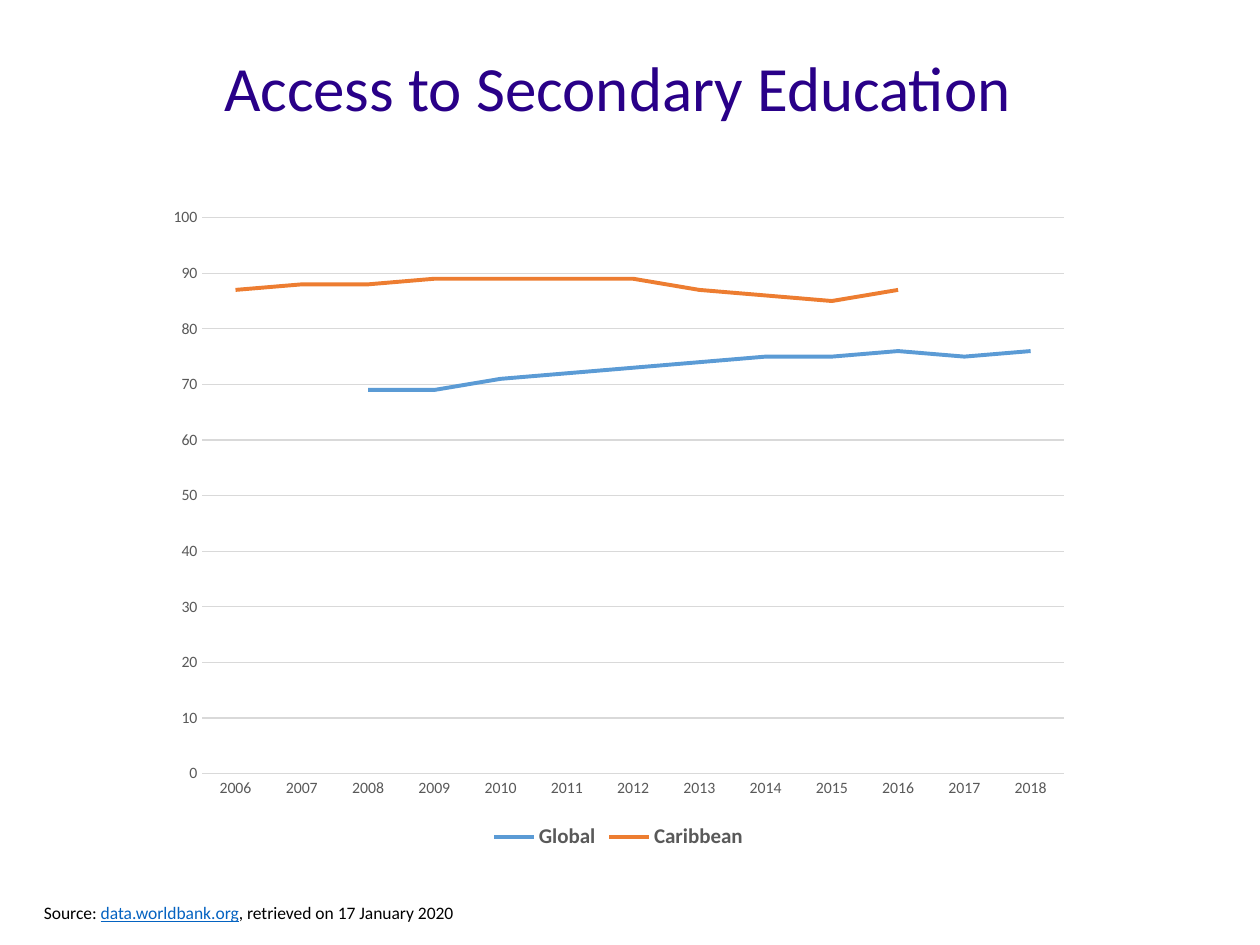
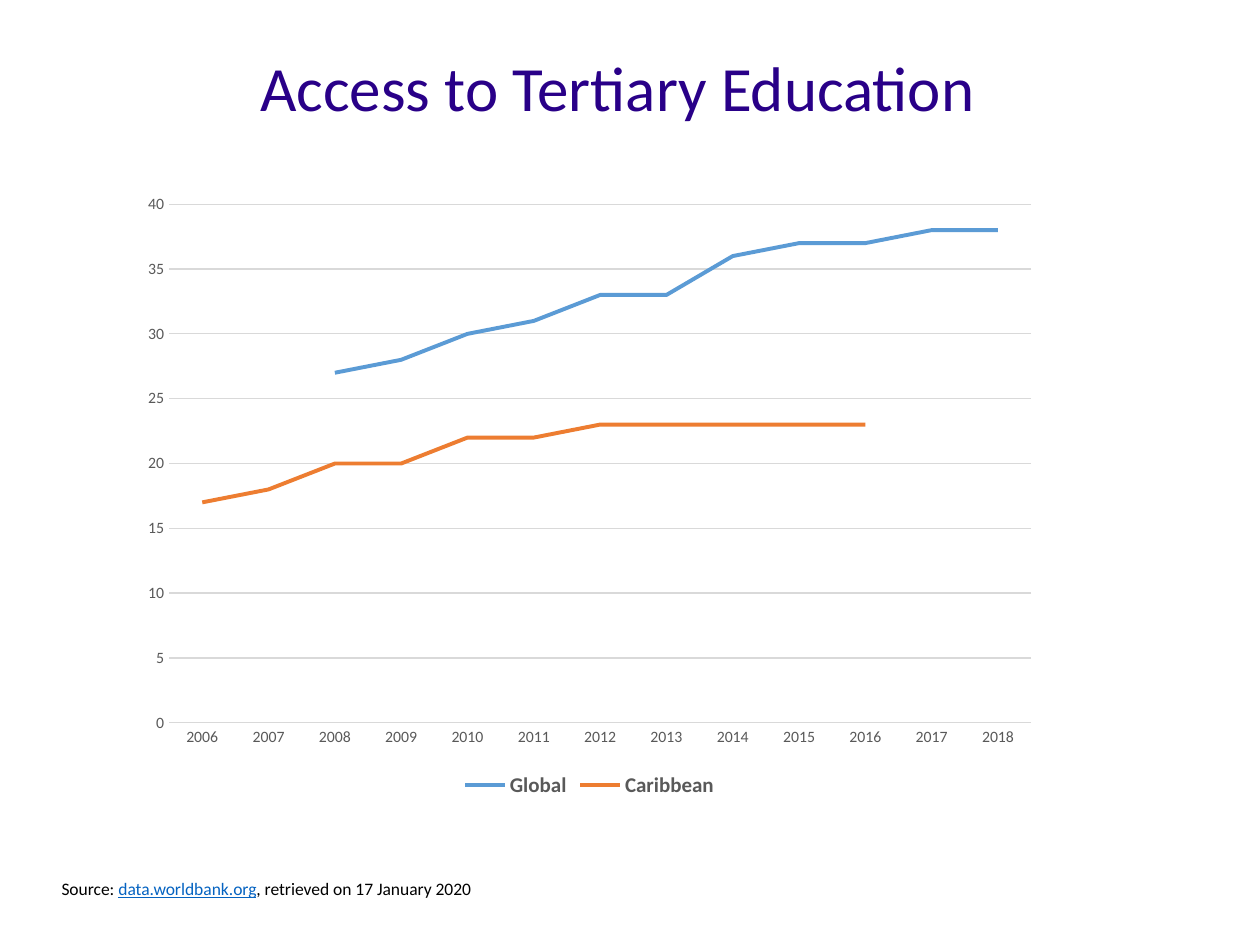
from dataclasses import dataclass

from pptx import Presentation
from pptx.chart.data import CategoryChartData
from pptx.dml.color import RGBColor
from pptx.enum.chart import XL_CHART_TYPE as ChartType
from pptx.enum.chart import XL_LEGEND_POSITION as LegendPosition
from pptx.enum.chart import XL_TICK_MARK as TickMark
from pptx.enum.text import MSO_ANCHOR as Anchor
from pptx.enum.text import PP_ALIGN as Align
from pptx.util import Emu, Pt

PX = 9144  # 100 px to the inch
FONT = "Calibri"
COLORS = {
    "title": "290088",
    "text": "000000",
    "link": "0563C1",
    "label": "595959",
    "grid": "D9D9D9",
    "Global": "5B9BD5",
    "Caribbean": "ED7D31",
}
YEARS = [str(year) for year in range(2006, 2019)]


@dataclass(frozen=True)
class Box:
    left: int
    top: int
    width: int
    height: int

    def emu(self) -> tuple[Emu, ...]:
        sides = (self.left, self.top, self.width, self.height)
        return tuple(Emu(side * PX) for side in sides)


@dataclass(frozen=True)
class AccessSlide:
    title: str
    chart_box: Box
    source_box: Box
    axis_max: int
    axis_step: int
    rates: dict[str, list[int | None]]


TITLE_BOX = Box(59, 0, 862, 145)
ACCESS_SLIDES = [
    AccessSlide(
        "Access to Secondary Education",
        Box(123, 155, 736, 523), Box(25, 711, 867, 28), 100, 10,
        {
            "Global": [None, None, 69, 69, 71, 72, 73, 74, 75, 75, 76, 75, 76],
            "Caribbean": [87, 88, 88, 89, 89, 89, 89, 87, 86, 85, 87, None, None],
        },
    ),
    AccessSlide(
        "Access to Tertiary Education",
        Box(103, 145, 730, 492), Box(39, 692, 867, 28), 40, 5,
        {
            "Global": [None, None, 27, 28, 30, 31, 33, 33, 36, 37, 37, 38, 38],
            "Caribbean": [17, 18, 20, 20, 22, 22, 23, 23, 23, 23, 23, None, None],
        },
    ),
]


def rgb(name: str) -> RGBColor:
    return RGBColor.from_string(COLORS[name])


def style_font(font, size: int, color: str, bold: bool = False) -> None:
    font.name, font.size, font.bold = FONT, Pt(size), bold
    font.color.rgb = rgb(color)


def style_line(line, color: str, width: float) -> None:
    line.color.rgb = rgb(color)
    line.width = Pt(width)


def add_run(paragraph, text: str, size: int, color: str):
    run = paragraph.add_run()
    run.text = text
    style_font(run.font, size, color)
    return run


def add_title(slide, text: str) -> None:
    frame = slide.shapes.add_textbox(*TITLE_BOX.emu()).text_frame
    frame.word_wrap = True
    frame.vertical_anchor = Anchor.MIDDLE
    heading = frame.paragraphs[0]
    heading.alignment = Align.CENTER
    heading.line_spacing = 0.9
    add_run(heading, text, 36, "title")


def add_source(slide, box: Box) -> None:
    frame = slide.shapes.add_textbox(*box.emu()).text_frame
    frame.word_wrap = True
    credit = frame.paragraphs[0]
    add_run(credit, "Source: ", 10, "text")
    add_run(credit, "data.worldbank.org", 10, "link").font.underline = True
    add_run(credit, ", retrieved on 17 January 2020", 10, "text")


def add_access_chart(slide, content: AccessSlide) -> None:
    data = CategoryChartData(number_format="0")
    data.categories = YEARS
    for region, rates in content.rates.items():
        data.add_series(region, rates)
    chart = slide.shapes.add_chart(
        ChartType.LINE, *content.chart_box.emu(), data).chart
    chart.has_title = False
    style_font(chart.font, 10, "text")

    # Region lines
    plot = chart.plots[0]
    plot.vary_by_categories = False
    for region in plot.series:
        region.smooth = False
        style_line(region.format.line, region.name, 2.25)

    # Axes and gridlines
    years, percent = chart.category_axis, chart.value_axis
    for axis in (years, percent):
        axis.major_tick_mark = axis.minor_tick_mark = TickMark.NONE
        style_font(axis.tick_labels.font, 9, "label")
    style_line(years.format.line, "grid", 0.75)
    percent.format.line.fill.background()
    percent.minimum_scale, percent.maximum_scale = 0, content.axis_max
    percent.major_unit = content.axis_step
    percent.has_major_gridlines = True
    style_line(percent.major_gridlines.format.line, "grid", 0.75)

    # Legend
    chart.has_legend = True
    chart.legend.position = LegendPosition.BOTTOM
    chart.legend.include_in_layout = False
    style_font(chart.legend.font, 12, "label", bold=True)


def main() -> None:
    deck = Presentation()
    deck.slide_width, deck.slide_height = Emu(1000 * PX), Emu(750 * PX)
    blank = deck.slide_layouts[6]
    for content in ACCESS_SLIDES:
        slide = deck.slides.add_slide(blank)
        add_title(slide, content.title)
        add_access_chart(slide, content)
        add_source(slide, content.source_box)
    deck.save("out.pptx")


if __name__ == "__main__":
    main()
